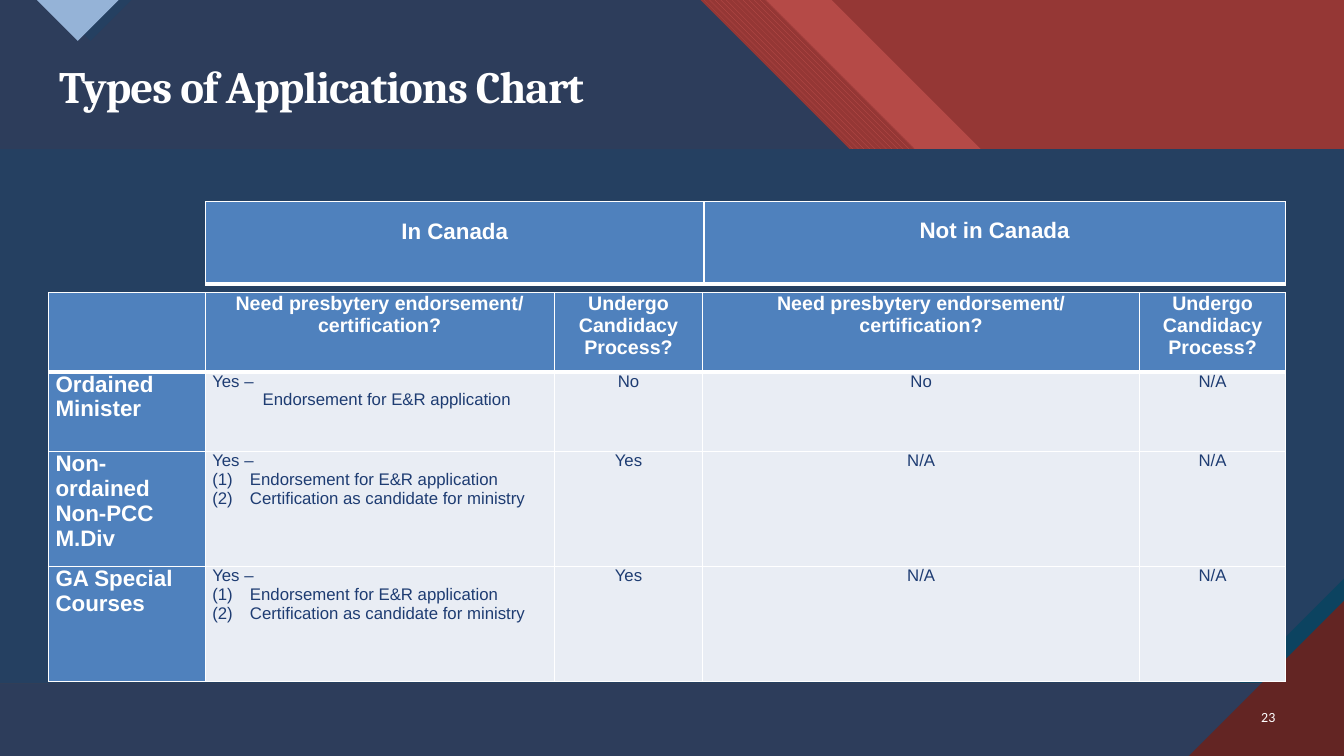
from lxml.etree import SubElement
from pptx import Presentation
from pptx.dml.color import RGBColor
from pptx.enum.dml import MSO_PATTERN
from pptx.enum.shapes import MSO_SHAPE
from pptx.enum.text import MSO_ANCHOR, PP_ALIGN
from pptx.oxml.ns import qn
from pptx.util import Cm, Pt

WHITE = RGBColor(0xFF, 0xFF, 0xFF)
NAVY = RGBColor(0x25, 0x40, 0x61)
SLATE = RGBColor(0x2D, 0x3D, 0x5B)
TEAL = RGBColor(0x0C, 0x43, 0x60)
SKY = RGBColor(0x95, 0xB3, 0xD7)
BRICK = RGBColor(0x95, 0x37, 0x35)
CORAL = RGBColor(0xB5, 0x4A, 0x47)
ROSE = RGBColor(0xC0, 0x50, 0x4D)
MAROON = RGBColor(0x63, 0x25, 0x23)
HEADING_BLUE = RGBColor(0x4F, 0x81, 0xBD)
PALE = RGBColor(0xE9, 0xED, 0xF4)
ANSWER_BLUE = RGBColor(0x1E, 0x3C, 0x72)

SLIDE_WIDTH, SLIDE_HEIGHT = 33.87, 19.05
BAND_TOP, BAND_BOTTOM = 3.76, 17.22
BAND_CUT = 2.64
CORNER = 3.91

ENDORSEMENT = "Endorsement for E&R application"
CERTIFICATION = "Certification as candidate for ministry"
QUESTIONS = [
    "",
    "Need presbytery endorsement/ certification?",
    "Undergo Candidacy Process?",
    "Need presbytery endorsement/\ncertification?",
    "Undergo Candidacy Process?",
]
APPLICANTS = [
    ("Ordained Minister", [ENDORSEMENT], ["No", "No", "N/A"]),
    ("Non-ordained Non-PCC M.Div", [ENDORSEMENT, CERTIFICATION], ["Yes", "N/A", "N/A"]),
    ("GA Special Courses", [ENDORSEMENT, CERTIFICATION], ["Yes", "N/A", "N/A"]),
]


def finish(shape, color):
    shape.shadow.inherit = False
    shape.line.fill.background()
    shape.fill.solid()
    shape.fill.fore_color.rgb = color
    return shape


def add_polygon(slide, points, color):
    (first_x, first_y), *others = [(Cm(x), Cm(y)) for x, y in points]
    builder = slide.shapes.build_freeform(first_x, first_y)
    builder.add_line_segments(others, close=True)
    return finish(builder.convert_to_shape(), color)


def add_rectangle(slide, left, top, width, height, color):
    box = (Cm(left), Cm(top), Cm(width), Cm(height))
    return finish(slide.shapes.add_shape(MSO_SHAPE.RECTANGLE, *box), color)


def add_header_panel(slide, top_right, color):
    """Draw a panel from the left edge whose right side slants at 45 degrees."""
    points = [(0, 0), (top_right, 0), (top_right + BAND_TOP, BAND_TOP), (0, BAND_TOP)]
    return add_polygon(slide, points, color)


def draw_header(slide):
    add_header_panel(slide, 20.96, CORAL)
    hatched_panel = add_header_panel(slide, 19.3, BRICK)
    hatched_panel.fill.patterned()
    hatched_panel.fill.pattern = MSO_PATTERN.WIDE_DOWNWARD_DIAGONAL
    hatched_panel.fill.fore_color.rgb = ROSE
    hatched_panel.fill.back_color.rgb = BRICK
    add_header_panel(slide, 17.65, SLATE)
    for center, color in ((2.28, NAVY), (1.96, SKY)):
        half = 1.03
        add_polygon(slide, [(center - half, 0), (center + half, 0), (center, half)], color)


def draw_body(slide):
    band_height = BAND_BOTTOM - BAND_TOP
    add_rectangle(slide, 0, BAND_BOTTOM, SLIDE_WIDTH, SLIDE_HEIGHT - BAND_BOTTOM, SLATE)
    add_rectangle(slide, 0, BAND_TOP, SLIDE_WIDTH, band_height, TEAL)
    add_polygon(slide, [
        (0, BAND_TOP), (SLIDE_WIDTH, BAND_TOP), (SLIDE_WIDTH, BAND_BOTTOM - BAND_CUT),
        (SLIDE_WIDTH - BAND_CUT, BAND_BOTTOM), (0, BAND_BOTTOM),
    ], NAVY)
    add_polygon(slide, [
        (SLIDE_WIDTH - CORNER, SLIDE_HEIGHT), (SLIDE_WIDTH, SLIDE_HEIGHT),
        (SLIDE_WIDTH, SLIDE_HEIGHT - CORNER),
    ], MAROON)


def style_text(frame, font_name, size, color, bold, align):
    for paragraph in frame.paragraphs:
        paragraph.alignment = align
        for run in paragraph.runs:
            run.font.name = font_name
            run.font.size = Pt(size)
            run.font.bold = bold
            run.font.color.rgb = color


def add_label(slide, box, text, font_name, size, bold, align):
    frame = slide.shapes.add_textbox(*map(Cm, box)).text_frame
    frame.word_wrap = True
    frame.vertical_anchor = MSO_ANCHOR.MIDDLE
    frame.text = text
    style_text(frame, font_name, size, WHITE, bold, align)
    return frame.paragraphs[0]


def fill_cell(cell, text, size, color=WHITE, fill=HEADING_BLUE, bold=True,
              align=PP_ALIGN.CENTER, top_line=1, bottom_line=1, top_margin=0):
    properties = cell._tc.get_or_add_tcPr()
    for side, width in (("L", 1), ("R", 1), ("T", top_line), ("B", bottom_line)):
        line = SubElement(properties, qn(f"a:ln{side}"), w=str(Pt(width)))
        line_fill = SubElement(line, qn("a:solidFill"))
        SubElement(line_fill, qn("a:srgbClr"), val=str(WHITE))
    cell.fill.solid()
    cell.fill.fore_color.rgb = fill
    cell.margin_left = cell.margin_right = Cm(0.18)
    cell.margin_top, cell.margin_bottom = Cm(top_margin), 0
    cell.text_frame.text = text
    style_text(cell.text_frame, "Arial", size, color, bold, align)


def indent_requirements(cell):
    """Indent a single requirement; number several as (1), (2)."""
    requirements = cell.text_frame.paragraphs[1:]
    numbered = len(requirements) > 1
    for requirement in requirements:
        properties = requirement._p.get_or_add_pPr()
        properties.set("marL", str(Cm(0.95 if numbered else 1.27)))
        properties.set("indent", str(Cm(-0.95 if numbered else 0)))
        if numbered:
            SubElement(properties, qn("a:buFont"), typeface="+mj-lt")
            SubElement(properties, qn("a:buAutoNum"), type="arabicParenBoth")


def add_grid(slide, left, top, column_widths, row_heights):
    width, height = sum(column_widths), sum(row_heights)
    grid = slide.shapes.add_table(len(row_heights), len(column_widths),
                                  Cm(left), Cm(top), Cm(width), Cm(height)).table
    grid.first_row = grid.horz_banding = False
    for column, column_width in zip(grid.columns, column_widths):
        column.width = Cm(column_width)
    for row, row_height in zip(grid.rows, row_heights):
        row.height = Cm(row_height)
    return grid


def draw_applications(slide, left, top):
    grid = add_grid(slide, left, top, [3.95, 8.8, 3.74, 11.01, 3.68], [2, 2, 2.9, 2.9])
    for column, question in enumerate(QUESTIONS):
        fill_cell(grid.cell(0, column), question, 14, bottom_line=3)
    for row, (applicant, requirements, answers) in enumerate(APPLICANTS, start=1):
        top_line = 3 if row == 1 else 1
        fill_cell(grid.cell(row, 0), applicant, 16, align=PP_ALIGN.LEFT, top_line=top_line)
        endorsement = "\n".join(["Yes –", *requirements])
        for column, answer in enumerate([endorsement, *answers], start=1):
            align = PP_ALIGN.LEFT if column == 1 else PP_ALIGN.CENTER
            fill_cell(grid.cell(row, column), answer, 12, ANSWER_BLUE, PALE, False,
                      align, top_line)
        indent_requirements(grid.cell(row, 1))


def draw_locations(slide, left, top):
    grid = add_grid(slide, left, top, [12.56, 14.65], [2.08])
    for column, (location, margin) in enumerate([("In Canada", 0.45), ("Not in Canada", 0.41)]):
        fill_cell(grid.cell(0, column), location, 16, bottom_line=3, top_margin=margin)


def main():
    presentation = Presentation()
    presentation.slide_width = Cm(SLIDE_WIDTH)
    presentation.slide_height = Cm(SLIDE_HEIGHT)
    slide = presentation.slides.add_slide(presentation.slide_layouts[6])
    slide.background.fill.solid()
    slide.background.fill.fore_color.rgb = BRICK

    draw_header(slide)
    draw_body(slide)
    draw_applications(slide, 1.22, 7.37)
    title = add_label(slide, (1.24, 1.5, 31.14, 1.5), "Types of Applications Chart",
                      "Cambria", 32, True, PP_ALIGN.LEFT)
    title.line_spacing = 0.9
    title.runs[0]._r.get_or_add_rPr().set("spc", "-70")
    add_label(slide, (31.27, 17.55, 1.12, 1.02), "23", "Calibri", 10, False, PP_ALIGN.RIGHT)
    draw_locations(slide, 5.18, 5.08)
    presentation.save("out.pptx")


if __name__ == "__main__":
    main()
